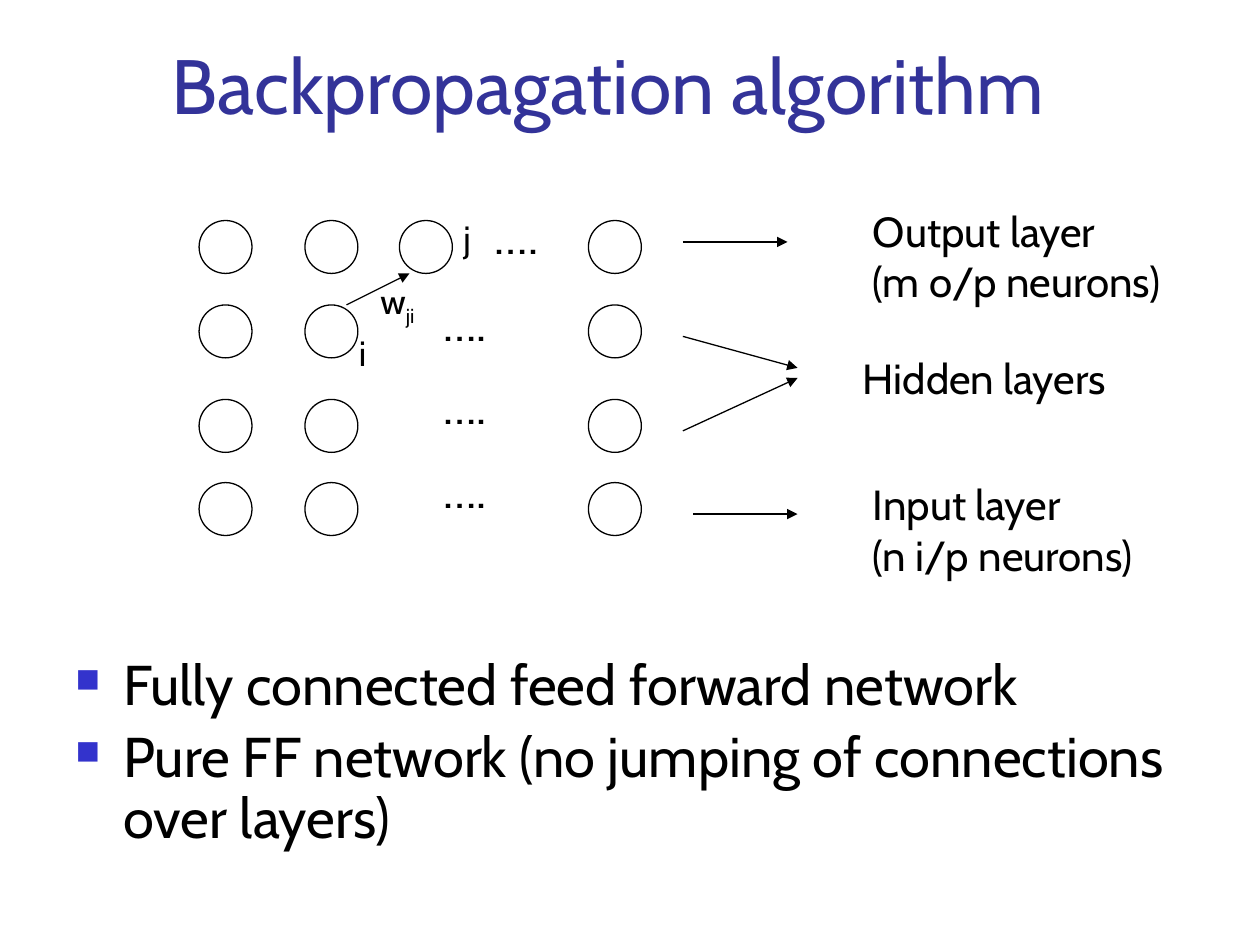
from pptx import Presentation
from pptx.dml.color import RGBColor
from pptx.enum.shapes import MSO_CONNECTOR, MSO_SHAPE
from pptx.enum.text import MSO_ANCHOR
from pptx.oxml.ns import qn
from pptx.util import Inches, Pt
from lxml import etree

BLACK = RGBColor(0x00, 0x00, 0x00)
TITLE_BLUE = RGBColor(0x33, 0x33, 0x99)
BULLET_BLUE = RGBColor(0x33, 0x33, 0xCC)
OVAL = MSO_SHAPE.OVAL
STRAIGHT = MSO_CONNECTOR.STRAIGHT
TOP, BOTTOM = MSO_ANCHOR.TOP, MSO_ANCHOR.BOTTOM


class NetworkSlide:
    font = "Cabin"
    line_width = Pt(0.75)
    neuron_size = 0.42

    def __init__(self, slide):
        self.slide = slide

    def style(self, run, size, color=BLACK):
        run.font.name = self.font
        run.font.size = Pt(size)
        run.font.color.rgb = color

    def text(self, content, left, top, width, height, size, color=BLACK, anchor=TOP):
        box = self.slide.shapes.add_textbox(
            Inches(left), Inches(top), Inches(width), Inches(height))
        frame = box.text_frame
        frame.word_wrap = True
        frame.vertical_anchor = anchor
        frame.text = content
        for paragraph in frame.paragraphs:
            for run in paragraph.runs:
                self.style(run, size, color)
        return frame

    def subscript(self, paragraph, content, size):
        run = paragraph.add_run()
        run.text = content
        self.style(run, size)
        run.font._element.set("baseline", "-25000")

    def bullets(self, items, left, top, width, height, size):
        frame = self.text("\n".join(items), left, top, width, height, size)
        indent = Inches(0.38)
        for paragraph in frame.paragraphs:
            paragraph.line_spacing = 0.9
            paragraph.space_before = Pt(size * 0.2)
            props = paragraph._p.get_or_add_pPr()
            props.set("marL", str(indent))
            props.set("indent", str(-indent))
            color = etree.SubElement(props, qn("a:buClr"))
            etree.SubElement(color, qn("a:srgbClr"), val=str(BULLET_BLUE))
            etree.SubElement(props, qn("a:buSzPct"), val="60000")
            etree.SubElement(props, qn("a:buChar"), char="■")

    def neuron(self, left, top):
        size = Inches(self.neuron_size)
        circle = self.slide.shapes.add_shape(OVAL, Inches(left), Inches(top), size, size)
        circle.shadow.inherit = False
        circle.fill.background()
        circle.line.color.rgb = BLACK
        circle.line.width = self.line_width

    def arrow(self, start, end):
        connector = self.slide.shapes.add_connector(
            STRAIGHT, *(Inches(value) for value in start + end))
        connector.line.color.rgb = BLACK
        connector.line.width = self.line_width
        etree.SubElement(connector.line._get_or_add_ln(), qn("a:tailEnd"), type="triangle")
        etree.SubElement(connector._element.spPr, qn("a:effectLst"))


def main():
    prs = Presentation()
    prs.slide_width, prs.slide_height = Inches(10), Inches(7.5)
    page = NetworkSlide(prs.slides.add_slide(prs.slide_layouts[6]))

    # Title and statements
    page.text("Backpropagation algorithm", 1.26, 0.23, 8.52, 0.85, 44, TITLE_BLUE, BOTTOM)
    page.bullets(["Fully connected feed forward network",
                  "Pure FF network (no jumping of connections over layers)"],
                 0.5, 5.17, 9, 1.53, 32)

    # Neurons: four layers, plus neuron j in the output layer
    layer_tops = (1.75, 2.42, 3.17, 3.83)
    for top in layer_tops:
        for left in (1.58, 2.42, 4.67):
            page.neuron(left, top)
    page.neuron(3.17, layer_tops[0])

    # Omitted neurons in each layer
    for left, top in ((3.83, 1.58), (3.42, 2.27), (3.42, 2.93), (3.42, 3.6)):
        page.text("….", left, top, 0.75, 0.57, 28)

    # Weighted connection from i to j
    page.arrow((2.75, 2.42), (3.25, 2.17))
    page.text("j", 3.58, 1.67, 0.25, 0.43, 20)
    page.text("i", 2.75, 2.58, 0.25, 0.43, 20)
    weight = page.text("w", 2.92, 2.17, 0.75, 0.43, 20)
    page.subscript(weight.paragraphs[0], "ji", 20)

    # Arrows to the layer names
    for start, end in (((5.42, 1.92), (6.25, 1.92)),
                       ((5.42, 2.67), (6.33, 2.92)),
                       ((5.42, 3.42), (6.33, 3)),
                       ((5.5, 4.08), (6.33, 4.08))):
        page.arrow(start, end)

    # Layer names
    for name, left, top, height in (("Output layer\v(m o/p neurons)", 6.83, 1.58, 0.9),
                                    ("Hidden layers", 6.75, 2.75, 0.5),
                                    ("Input layer\v(n i/p neurons)", 6.83, 3.75, 0.9)):
        page.text(name, left, top, 2.58, height, 24)

    prs.save("out.pptx")


if __name__ == "__main__":
    main()
